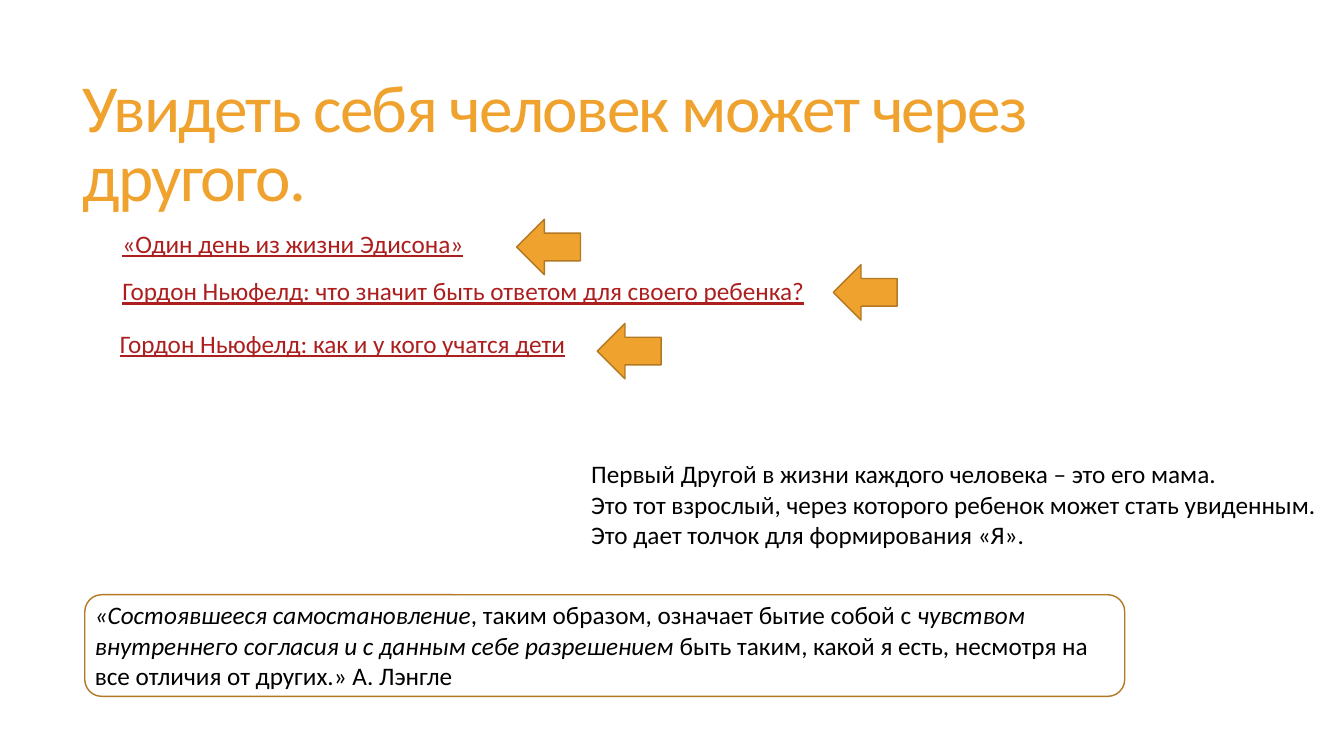
from pptx import Presentation
from pptx import util as u
from pptx.dml.color import RGBColor
from pptx.enum import shapes, text

AMBER = RGBColor(0xF0, 0xA2, 0x2E)
BROWN = RGBColor(0xB2, 0x78, 0x22)
LINK_RED = RGBColor(0xAD, 0x1F, 0x1F)
BLACK = RGBColor(0, 0, 0)
FONT = "Calibri"

deck = Presentation()
deck.slide_width, deck.slide_height = u.Inches(13.33), u.Inches(7.5)
COLUMN, ROW = deck.slide_width / 160, deck.slide_height / 90
slide = deck.slides.add_slide(deck.slide_layouts[5])


def cells(left, top, width, height):
    """Turn a place on the 160 by 90 grid into slide lengths."""
    return (round(left * COLUMN), round(top * ROW),
            round(width * COLUMN), round(height * ROW))


def add_text(place, paragraphs, color, wrap=False):
    """Add an 18 pt text box; each paragraph is a list of (wording, italic)."""
    frame = slide.shapes.add_textbox(*cells(*place)).text_frame
    frame.word_wrap = wrap
    frame.auto_size = text.MSO_AUTO_SIZE.SHAPE_TO_FIT_TEXT
    for index, pieces in enumerate(paragraphs):
        paragraph = frame.add_paragraph() if index else frame.paragraphs[0]
        for wording, italic in pieces:
            run = paragraph.add_run()
            run.text = wording
            run.font.name, run.font.size = FONT, u.Pt(18)
            run.font.italic = italic
            run.font.color.rgb = color
    return frame


# Title
title = slide.shapes.title
title.left, title.top, title.width, title.height = cells(8.6, 6.6, 141.4, 21.7)
heading = title.text_frame
heading.text = "Увидеть себя человек может через другого."
heading.word_wrap = True
heading.auto_size = text.MSO_AUTO_SIZE.NONE
heading.vertical_anchor = text.MSO_ANCHOR.MIDDLE
heading_line = heading.paragraphs[0]
heading_line.alignment = text.PP_ALIGN.LEFT
heading_line.line_spacing = 0.85
heading_font = heading_line.runs[0].font
heading_font.name, heading_font.size = FONT, u.Pt(48)
heading_font.color.rgb = AMBER
heading_line.runs[0]._r.get_or_add_rPr().set("spc", "-120")

# Video titles, each with an arrow pointing at it
videos = [
    ("«Один день из жизни Эдисона»", (13.4, 26.6, 43.1, 4.8), (62, 25.6)),
    ("Гордон Ньюфелд: что значит быть ответом для своего ребенка?",
     (13.4, 32.2, 85.8, 8.5), (99.7, 31)),
    ("Гордон Ньюфелд: как и у кого учатся дети",
     (13.1, 38.5, 56, 8.5), (71.6, 38)),
]
for video, place, arrow_corner in videos:
    video_frame = add_text(place, [[(video, False)]], LINK_RED)
    video_frame.paragraphs[0].runs[0].font.underline = True
    arrow = slide.shapes.add_shape(
        shapes.MSO_SHAPE.DOWN_ARROW, *cells(*arrow_corner, 6.6, 7.6))
    arrow.rotation = 90
    arrow.shadow.inherit = False
    arrow.fill.solid()
    arrow.fill.fore_color.rgb = AMBER
    arrow.line.color.rgb = BROWN
    arrow.line.width = u.Pt(1)

# The first Other
mother_lines = [
    "Первый Другой в жизни каждого человека – это его мама.",
    "Это тот взрослый, через которого ребенок может стать увиденным.",
    "Это дает толчок для формирования «Я».",
]
add_text((69.2, 54, 89.8, 15.7), [[(line, False)] for line in mother_lines], BLACK)

# Framed quotation
quote = [
    ("«Состоявшееся самостановление", True),
    (", таким образом, означает бытие собой с ", False),
    ("чувством внутреннего согласия и с данным себе разрешением", True),
    (" быть таким, какой я есть, несмотря на все отличия от других.» А. Лэнгле", False),
]
add_text((10.1, 70.8, 124.6, 12.1), [quote], BLACK, wrap=True)
quote_border = slide.shapes.add_shape(
    shapes.MSO_SHAPE.ROUNDED_RECTANGLE, *cells(10.1, 70.8, 123.8, 12.1))
quote_border.shadow.inherit = False
quote_border.fill.background()
quote_border.line.color.rgb = BROWN
quote_border.line.width = u.Pt(1)

deck.save("out.pptx")
